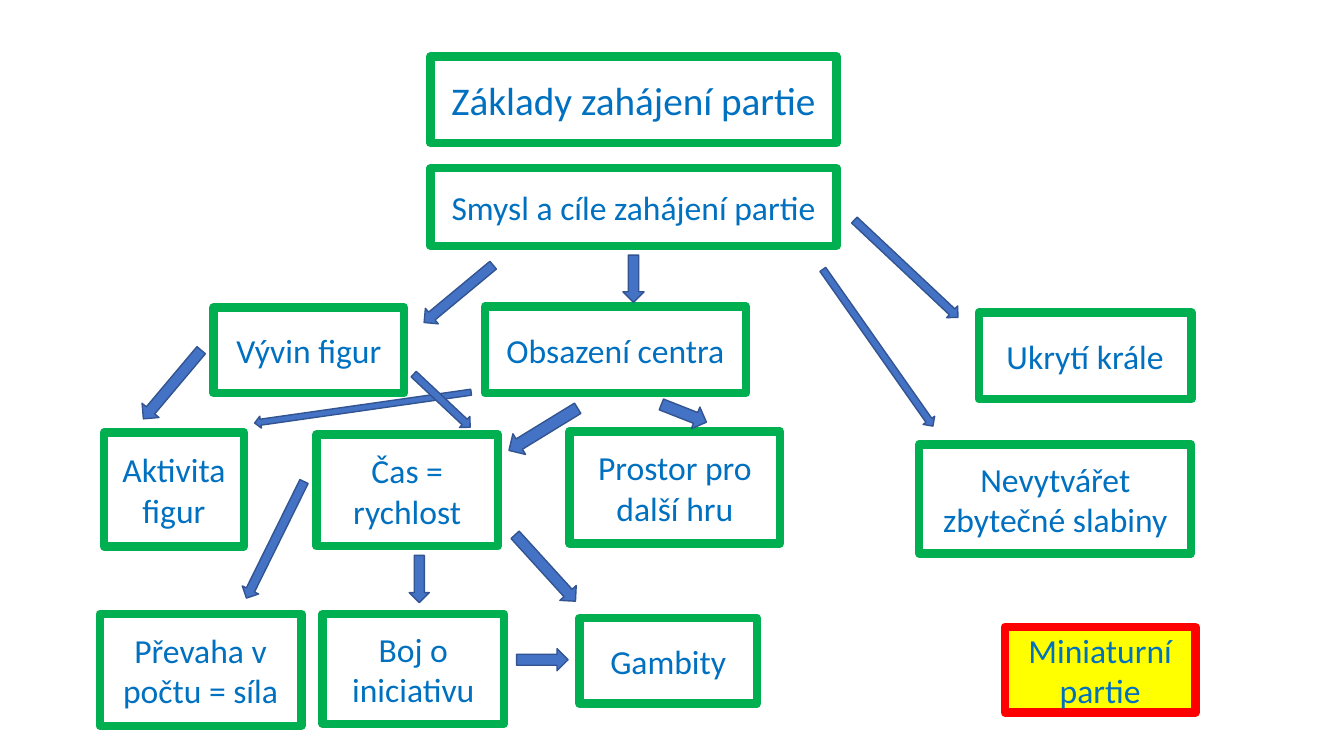
from pptx import Presentation
from pptx.dml.color import RGBColor
from pptx.enum.shapes import MSO_SHAPE
from pptx.enum.text import MSO_ANCHOR, PP_ALIGN
from pptx.util import Pt

COLORS = {"text": "0070C0", "green": "00B050", "red": "FF0000",
          "yellow": "FFFF00", "arrow": "4472C4", "edge": "325491"}

# text, left, top, width, height
TITLE = ("Základy zahájení partie", 307.4, 40.3, 290.2, 61.9)
TOPICS = [
    ("Smysl a cíle zahájení partie", 307.4, 120.2, 290.2, 55.4),
    ("Vývin figur", 152.6, 219.6, 136.1, 61.2),
    ("Obsazení centra", 346.3, 218.9, 186.5, 61.9),
    ("Ukrytí krále", 699.1, 223.2, 151.9, 61.9),
    ("Aktivita figur", 74.2, 308.9, 100.1, 81.4),
    ("Čas = rychlost", 226.1, 310.3, 129.6, 79.9),
    ("Prostor pro další hru", 406.8, 308.2, 150.5, 79.9),
    ("Nevytvářet zbytečné slabiny", 656.6, 317.5, 194.4, 77.8),
    ("Převaha v počtu = síla", 71.3, 438.5, 144, 79.9),
    ("Boj o iniciativu", 230.4, 438.5, 129.6, 78.5),
    ("Gambity", 414, 441.4, 126.7, 61.2),
]
GAMES = ("Miniaturní partie", 717.8, 447.8, 136.1, 61.2)

# centre x, centre y, thickness, length, clockwise turn from pointing down
ARROWS = [
    (327.6, 209.9, 14.4, 64.1, 50.3),
    (452.5, 199.1, 15.1, 33.8, 0),
    (627.1, 248.4, 10.1, 136.8, 324.9),
    (647.3, 191.9, 11.5, 101.5, 313.2),
    (123.1, 274.7, 15.8, 64.1, 40.1),
    (259.2, 291.2, 8.6, 156.2, 81.9),
    (315.7, 286.2, 10.8, 55.4, 313.2),
    (388.1, 306.7, 17.3, 57.6, 58.5),
    (488.5, 295.2, 16.6, 34.6, 291.5),
    (196.6, 385.6, 13, 92.9, 26.3),
    (299.5, 413.6, 14.4, 33.8, 0),
    (389.5, 405.7, 15.8, 64.1, 317.7),
    (387.4, 471.2, 15.8, 36.7, 270),
]


def color(name):
    return RGBColor.from_string(COLORS[name])


def add_shape(slide, kind, place, fill, line, weight):
    shape = slide.shapes.add_shape(kind, *[Pt(n) for n in place])
    shape.shadow.inherit = False
    if fill:
        shape.fill.solid()
        shape.fill.fore_color.rgb = color(fill)
    else:
        shape.fill.background()
    shape.line.color.rgb = color(line)
    shape.line.width = Pt(weight)
    return shape


def add_box(slide, box, size=24, fill=None, line="green"):
    text, *place = box
    frame = add_shape(slide, MSO_SHAPE.RECTANGLE, place, fill, line, 6).text_frame
    frame.word_wrap = True
    frame.vertical_anchor = MSO_ANCHOR.MIDDLE
    frame.text = text
    para = frame.paragraphs[0]
    para.alignment = PP_ALIGN.CENTER
    font = para.runs[0].font
    font.name = "Calibri"
    font.size = Pt(size)
    font.color.rgb = color("text")


def add_arrow(slide, x, y, thick, length, turn):
    place = (x - thick / 2, y - length / 2, thick, length)
    arrow = add_shape(slide, MSO_SHAPE.DOWN_ARROW, place, "arrow", "edge", 1)
    arrow.rotation = turn


def main():
    deck = Presentation()
    deck.slide_width, deck.slide_height = Pt(960), Pt(540)
    slide = deck.slides.add_slide(deck.slide_layouts[6])
    add_box(slide, TITLE, size=28)
    for topic in TOPICS:
        add_box(slide, topic)
    for arrow in ARROWS:
        add_arrow(slide, *arrow)
    add_box(slide, GAMES, fill="yellow", line="red")
    deck.save("out.pptx")


if __name__ == "__main__":
    main()
